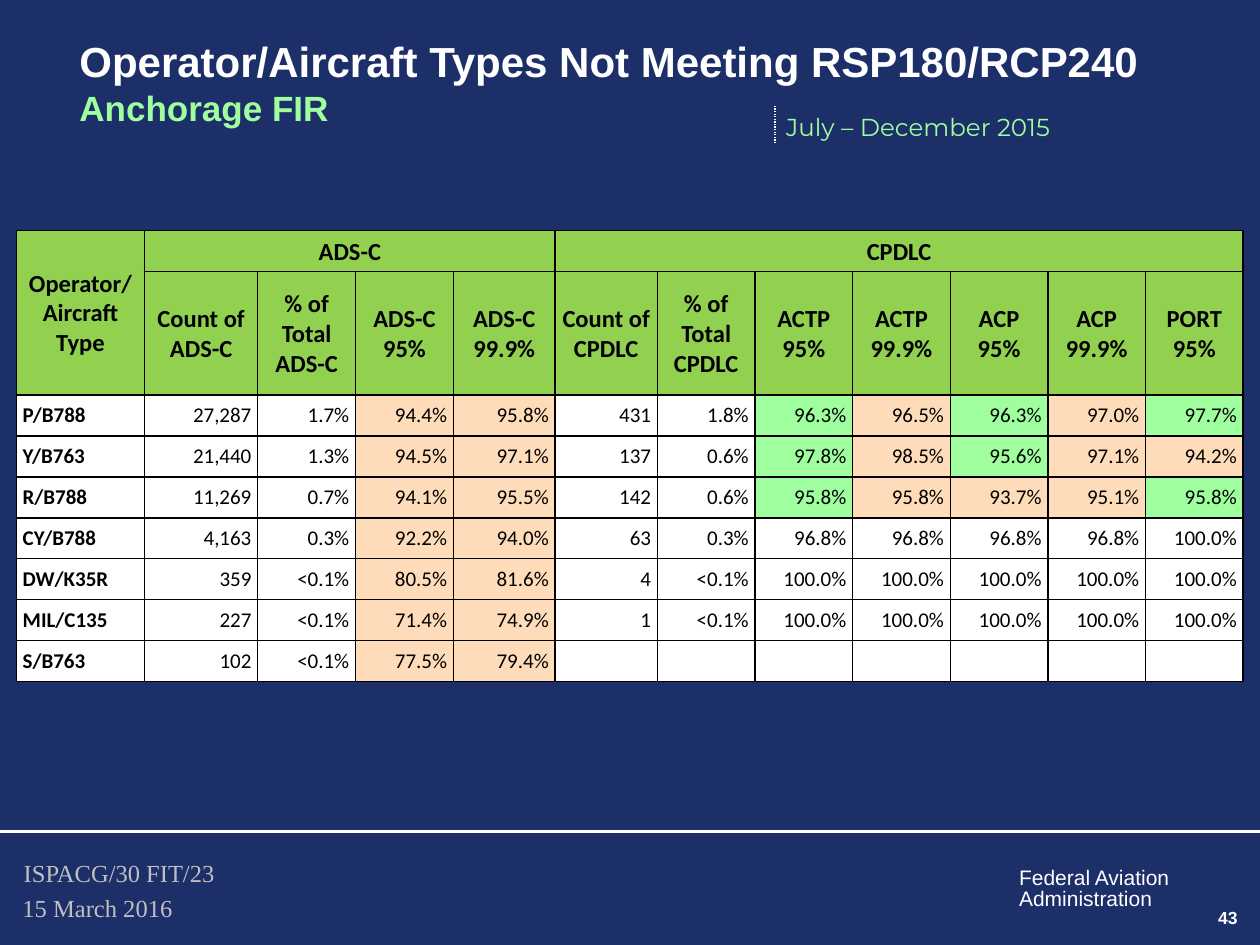
from lxml import etree
from pptx import Presentation
from pptx.dml.color import RGBColor
from pptx.enum.dml import MSO_LINE
from pptx.enum.shapes import MSO_CONNECTOR
from pptx.enum.text import MSO_ANCHOR, MSO_AUTO_SIZE, PP_ALIGN
from pptx.oxml import parse_xml
from pptx.oxml.ns import nsdecls, qn
from pptx.util import Inches, Pt

LEFT, MID, RIGHT = PP_ALIGN.LEFT, PP_ALIGN.CENTER, PP_ALIGN.RIGHT
MIDDLE, FIXED = MSO_ANCHOR.MIDDLE, MSO_AUTO_SIZE.NONE
LINE, DOTS = MSO_CONNECTOR.STRAIGHT, MSO_LINE.ROUND_DOT
NAVY, WHITE, BLACK, GREY = "1D2F68", "FFFFFF", "000000", "C0C0C0"
LIME, MINT, PEACH = "92D050", "9FFF9F", "FFDCB9"


def hue(code):
    return RGBColor.from_string(code)


def write(para, text, size, font, color, bold=False, align=LEFT):
    para.alignment = align
    run = para.add_run()
    run.text = text
    run.font.size = Pt(size)
    run.font.name = font
    run.font.bold = bold
    run.font.color.rgb = hue(color)


deck = Presentation()
deck.slide_width, deck.slide_height = Inches(10), Inches(7.5)
U, V = deck.slide_width / 100, deck.slide_height / 100
slide = deck.slides.add_slide(deck.slide_layouts[5])
slide.background.fill.solid()
slide.background.fill.fore_color.rgb = hue(NAVY)
shapes = slide.shapes

title = shapes.title
title.left, title.top = int(5.3 * U), int(4.67 * V)
title.width, title.height = int(90 * U), int(8 * V)
frame = title.text_frame
frame.auto_size = FIXED
frame.vertical_anchor = MIDDLE
head = frame.paragraphs[0]
write(head, "Operator/Aircraft Types Not Meeting RSP180/RCP240 ", 24, "Arial", WHITE, True)
write(head, "Anchorage FIR", 20, "Arial", MINT, True)

notes = [
    (79.9, 91.2, 14, 5.87, ["Federal Aviation", "Administration"], 12, "Arial", WHITE, False, LEFT),
    (0.9, 90.13, 52.3, 4.53, ["ISPACG/30 FIT/23"], 14, "Times New Roman", GREY, False, LEFT),
    (0.8, 93.87, 40.9, 4.53, ["15 March 2016"], 14, "Times New Roman", GREY, False, LEFT),
    (82.5, 95.33, 16.7, 4.6, ["43"], 10, "Arial", WHITE, True, RIGHT),
    (61.4, 11.2, 38.6, 4.53, ["July – December 2015"], 14, "Montserrat", MINT, False, LEFT),
]
for x, y, w, h, lines, *style in notes:
    box = shapes.add_textbox(int(x * U), int(y * V), int(w * U), int(h * V))
    frame = box.text_frame
    frame.word_wrap = len(lines) == 1
    for i, line in enumerate(lines):
        para = frame.add_paragraph() if i else frame.paragraphs[0]
        if len(lines) > 1:
            para.line_spacing = 0.85
        write(para, line, *style)

rules = [(0, 88, 100, 88, 1.5, None), (61.5, 11.2, 61.5, 15.2, 0.75, DOTS)]
for x, y, right, low, width, dash in rules:
    rule = shapes.add_connector(LINE, int(x * U), int(y * V), int(right * U), int(low * V))
    rule.line.color.rgb = hue(WHITE)
    rule.line.width = Pt(width)
    if dash:
        rule.line.dash_style = dash
    etree.SubElement(rule._element.spPr, qn("a:effectLst"))

rows = [
    ["Operator/ Aircraft Type", "ADS-C", "", "", "", "CPDLC"] + [""] * 6,
    ["", "Count of ADS-C", "% of Total ADS-C", "ADS-C 95%", "ADS-C 99.9%", "Count of CPDLC",
     "% of Total CPDLC", "ACTP 95%", "ACTP 99.9%", "ACP\n95%", "ACP 99.9%", "PORT 95%"],
    ["P/B788", "27,287", "1.7%", "94.4%", "95.8%", "431", "1.8%",
     "96.3%", "96.5%", "96.3%", "97.0%", "97.7%"],
    ["Y/B763", "21,440", "1.3%", "94.5%", "97.1%", "137", "0.6%",
     "97.8%", "98.5%", "95.6%", "97.1%", "94.2%"],
    ["R/B788", "11,269", "0.7%", "94.1%", "95.5%", "142", "0.6%",
     "95.8%", "95.8%", "93.7%", "95.1%", "95.8%"],
    ["CY/B788", "4,163", "0.3%", "92.2%", "94.0%", "63", "0.3%"] + ["96.8%"] * 4 + ["100.0%"],
    ["DW/K35R", "359", "<0.1%", "80.5%", "81.6%", "4", "<0.1%"] + ["100.0%"] * 5,
    ["MIL/C135", "227", "<0.1%", "71.4%", "74.9%", "1", "<0.1%"] + ["100.0%"] * 5,
    ["S/B763", "102", "<0.1%", "77.5%", "79.4%"] + [""] * 7,
]
goals = {3: 95, 4: 99, 7: 95, 8: 99, 9: 95, 10: 99, 11: 95}
wide = [10.18, 8.98, 7.77, 7.77, 8.07, 8.12] + [7.75] * 6
tall = [4.33, 13.1] + [4.33] * 7

grid = shapes.add_table(len(rows), len(wide), int(1.3 * U), int(24.4 * V),
                        int(sum(wide) * U), int(sum(tall) * V)).table
for col, share in zip(grid.columns, wide):
    col.width = int(share * U)
for row, share in zip(grid.rows, tall):
    row.height = int(share * V)
for top, left, low, right in [(0, 0, 1, 0), (0, 1, 0, 4), (0, 5, 0, 11)]:
    grid.cell(top, left).merge(grid.cell(low, right))

for r, row in enumerate(rows):
    for c, text in enumerate(row):
        cell = grid.cell(r, c)
        top = r < 2
        pad = Inches(0.01 if top or not text else 0.05)
        cell.margin_left = cell.margin_right = cell.margin_top = pad
        cell.margin_bottom = 0 if top else pad
        cell.vertical_anchor = MIDDLE
        for side in "LRTB":
            cell._tc.get_or_add_tcPr().append(parse_xml(
                f'<a:ln{side} {nsdecls("a")} w="12700"><a:solidFill>'
                f'<a:srgbClr val="{BLACK}"/></a:solidFill></a:ln{side}>'))
        fill = LIME if top else WHITE
        if not top and text and c in goals:
            count = row[1 if c < 5 else 5]
            if int(count.replace(",", "")) >= 100:
                fill = MINT if float(text.strip("%")) >= goals[c] else PEACH
        cell.fill.solid()
        cell.fill.fore_color.rgb = hue(fill)
        if text:
            frame = cell.text_frame
            align = MID if top else RIGHT if c else LEFT
            for i, line in enumerate(text.split("\n")):
                para = frame.add_paragraph() if i else frame.paragraphs[0]
                write(para, line, 14 if top else 12, "Calibri", BLACK, top or c == 0, align)

deck.save("out.pptx")
